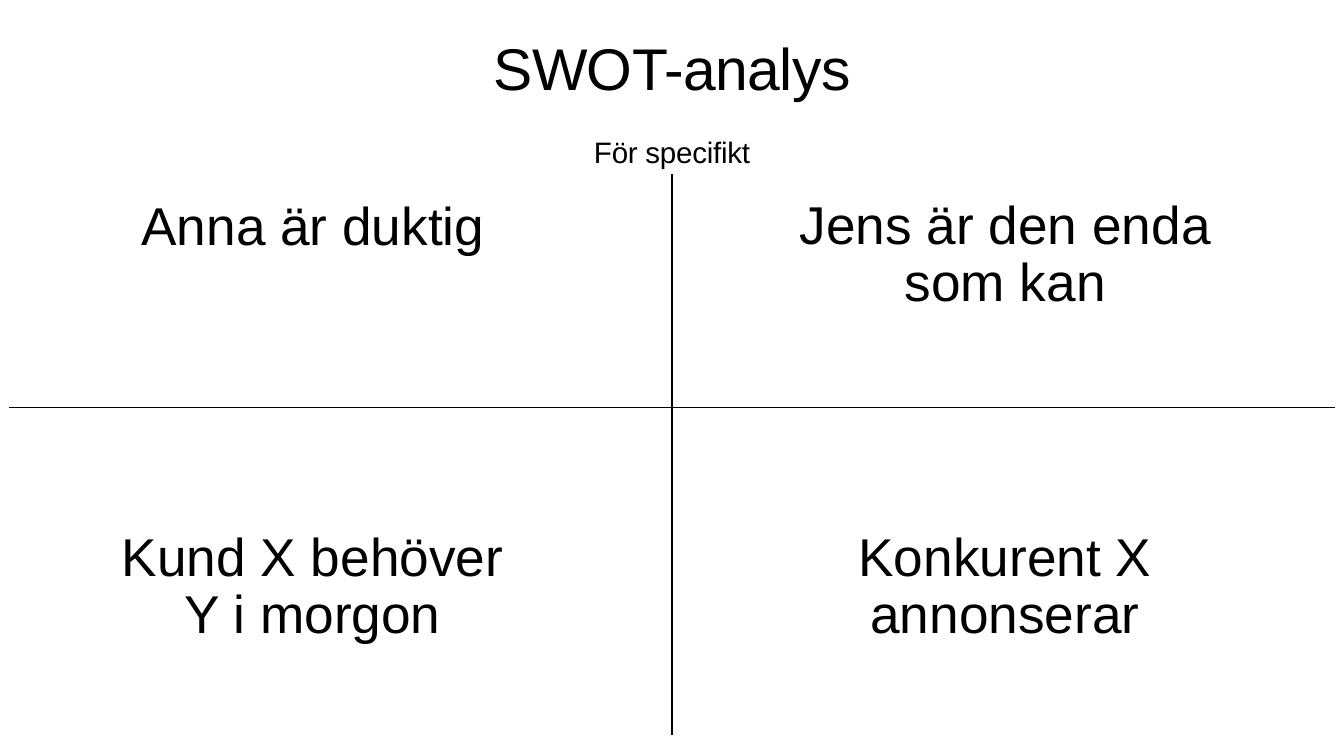
from lxml import etree
from pptx import Presentation
from pptx.dml.color import RGBColor
from pptx.enum.shapes import MSO_CONNECTOR
from pptx.enum.text import MSO_ANCHOR, MSO_AUTO_SIZE, PP_ALIGN
from pptx.oxml.ns import qn
from pptx.util import Pt

STRAIGHT = MSO_CONNECTOR.STRAIGHT
TOP, MIDDLE = MSO_ANCHOR.TOP, MSO_ANCHOR.MIDDLE
GROW, FIXED = MSO_AUTO_SIZE.SHAPE_TO_FIT_TEXT, MSO_AUTO_SIZE.NONE
CENTER = PP_ALIGN.CENTER
FONT, BLACK, WHITE = "Arial", "000000", "FFFFFF"
WIDTH, HEIGHT, INSET = 1920, 1080, 4


def color(code):
    """Turn a hex string into a colour."""
    return RGBColor.from_string(code)


def add_text(slide, box, lines, size, spacing, track=0, label=False):
    """Add centred text; a label sits mid-box and does not wrap."""
    shape = slide.shapes.add_textbox(*map(Pt, box))
    frame = shape.text_frame
    frame.word_wrap = not label
    frame.auto_size = GROW if label else FIXED
    frame.vertical_anchor = MIDDLE if label else TOP
    frame.margin_left = frame.margin_right = Pt(INSET)
    frame.margin_top = frame.margin_bottom = Pt(INSET)
    para = frame.paragraphs[0]
    para.alignment = CENTER
    para.line_spacing = spacing
    for index, line in enumerate(lines):
        if index:
            para.add_line_break()
        run = para.add_run()
        run.text = line
        run.font.name = FONT
        run.font.size = Pt(size)
        run.font.color.rgb = color(BLACK)
        if track:
            run.font._element.set("spc", str(round(track * 100)))


def add_axis(slide, start, end):
    """Add one black axis line without a shadow."""
    axis = slide.shapes.add_connector(STRAIGHT, *map(Pt, start + end))
    axis.line.color.rgb = color(BLACK)
    axis.line.width = Pt(2)
    etree.SubElement(axis._element.spPr, qn("a:effectLst"))


def main():
    """Build the SWOT slide."""
    deck = Presentation()
    deck.slide_width, deck.slide_height = Pt(WIDTH), Pt(HEIGHT)
    slide = deck.slides.add_slide(deck.slide_layouts[6])
    fill = slide.background.fill
    fill.solid()
    fill.fore_color.rgb = color(WHITE)

    add_text(slide, (96, 61, 1728, 136), ["SWOT-analys"], 84, 0.8, -0.8)
    add_text(slide, (96, 188, 1728, 65.5), ["För specifikt"], 42.2, 1, -0.4)
    add_axis(slide, (13, 582.5), (1907, 582.5))
    add_axis(slide, (WIDTH / 2, 1050.5), (WIDTH / 2, 249))

    quadrants = [
        ((187, 270, 520, 112), ["Anna är duktig"]),
        ((1133, 262, 606, 206), ["Jens är den enda", "som kan"]),
        ((164, 736.5, 565, 206), ["Kund X behöver", "Y i morgon"]),
        ((1220, 736.5, 431, 206), ["Konkurent X", "annonserar"]),
    ]
    for box, lines in quadrants:
        add_text(slide, box, lines, 76, 0.9, label=True)
    deck.save("out.pptx")


if __name__ == "__main__":
    main()
